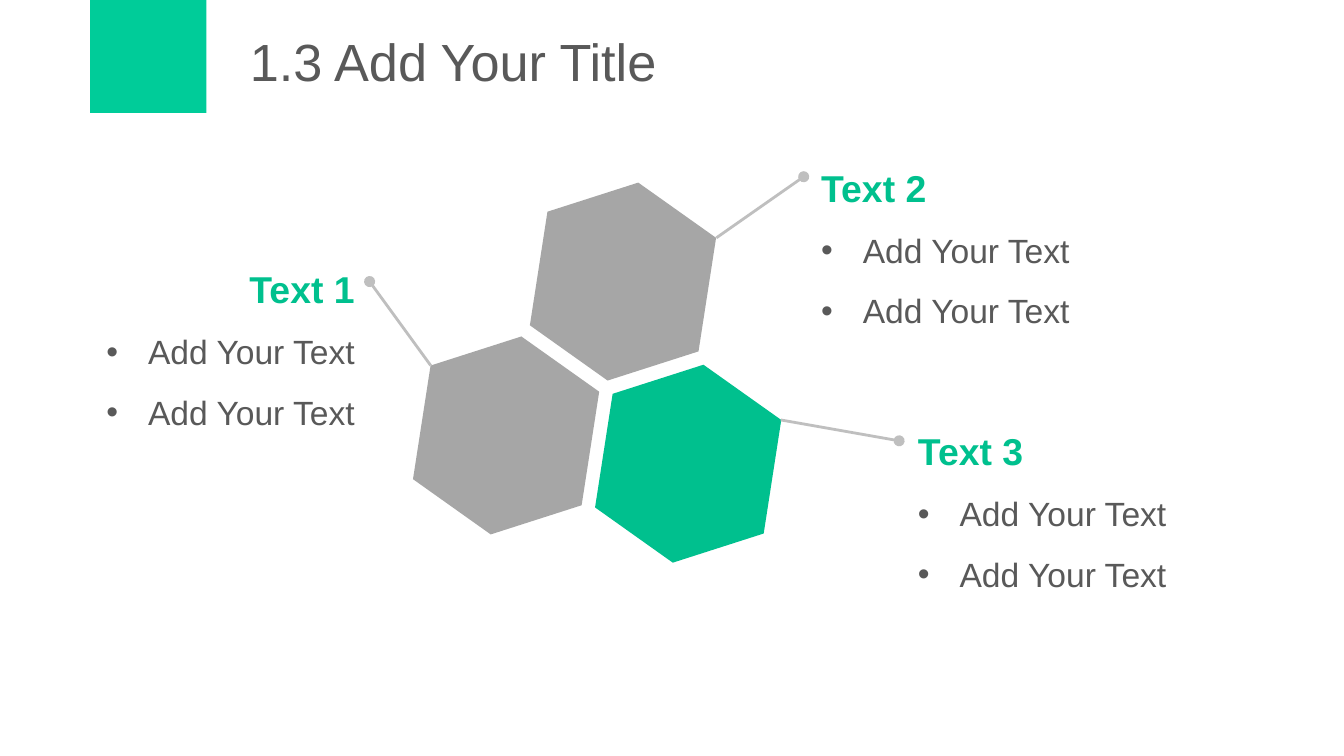
import pptx
import pptx.dml.color
import pptx.enum.shapes
import pptx.enum.text
import pptx.oxml
import pptx.oxml.ns
import pptx.util
from dataclasses import dataclass

TITLE = "1.3 Add Your Title"
TITLE_BOX = (352, 27, 1578, 126)
CORNER_BLOCK = (134, 0, 173, 168)
ITEMS = ["Add Your Text", "Add Your Text"]

# Each topic: heading, text box, alignment, hexagon corner, hexagon colour, leader line
TOPICS = [
    {"heading": "Text 1", "box": (102, 353, 446, 302), "align": "RIGHT",
     "hexagon": (604, 521), "fill": "grey", "leader": (641, 544, 550, 419)},
    {"heading": "Text 2", "box": (1202, 202, 536, 302), "align": "LEFT",
     "hexagon": (778, 292), "fill": "grey", "leader": (1066, 354, 1196, 263)},
    {"heading": "Text 3", "box": (1346, 594, 536, 302), "align": "LEFT",
     "hexagon": (875, 563), "fill": "green", "leader": (1162, 625, 1338, 656)},
]

SLIDE_SIZE = (2000, 1125)
HEXAGON_SIZE = (298, 254)
HEXAGON_ROTATION = 98.8
BULLET_INDENT = 62
EMU_PER_PX = 4572  # 200 px to the inch


@dataclass(frozen=True)
class Theme:
    font: str = "Arial"
    block: str = "00CC99"
    green: str = "00C08E"
    grey: str = "A6A6A6"
    leader: str = "BFBFBF"
    text: str = "595959"
    title_size: int = 28
    heading_size: int = 20
    item_size: int = 18
    leader_width: float = 1.5


THEME = Theme()


def px(*lengths):
    return [pptx.util.Emu(length * EMU_PER_PX) for length in lengths]


def rgb(color):
    return pptx.dml.color.RGBColor.from_string(color)


def append_xml(parent, xml):
    """Append a DrawingML element, written without its namespace declaration."""
    tag, rest = xml.split(" ", 1)
    namespace = pptx.oxml.ns.nsdecls("a")
    element = pptx.oxml.parse_xml(f"{tag} {namespace} {rest}")
    parent.append(element)


def place(shape, box):
    shape.left, shape.top, shape.width, shape.height = px(*box)


def add_run(paragraph, text, size, color, bold=False):
    run = paragraph.add_run()
    run.text = text
    run.font.name = THEME.font
    run.font.size = pptx.util.Pt(size)
    run.font.bold = bold
    run.font.color.rgb = rgb(color)


def add_solid(slide, kind, box, color):
    shape = slide.shapes.add_shape(kind, *px(*box))
    shape.shadow.inherit = False
    shape.fill.solid()
    shape.fill.fore_color.rgb = rgb(color)
    shape.line.fill.background()
    return shape


def add_leader(slide, ends):
    """Draw a thin line that finishes in a dot."""
    connector = slide.shapes.add_connector(
        pptx.enum.shapes.MSO_CONNECTOR.STRAIGHT, *px(*ends))
    connector.line.color.rgb = rgb(THEME.leader)
    connector.line.width = pptx.util.Pt(THEME.leader_width)
    append_xml(connector.line._get_or_add_ln(), '<a:tailEnd type="oval"/>')
    append_xml(connector._element.spPr, "<a:effectLst />")


def fill_title(title):
    place(title, TITLE_BOX)
    frame = title.text_frame
    frame.vertical_anchor = pptx.enum.text.MSO_ANCHOR.MIDDLE
    frame.auto_size = pptx.enum.text.MSO_AUTO_SIZE.NONE
    paragraph = frame.paragraphs[0]
    paragraph.alignment = pptx.enum.text.PP_ALIGN.LEFT
    add_run(paragraph, TITLE, THEME.title_size, THEME.text)


def fill_topic(body, topic):
    place(body, topic["box"])
    frame = body.text_frame
    frame.word_wrap = True
    frame.vertical_anchor = pptx.enum.text.MSO_ANCHOR.TOP
    frame.auto_size = pptx.enum.text.MSO_AUTO_SIZE.SHAPE_TO_FIT_TEXT
    for index, text in enumerate([topic["heading"], *ITEMS]):
        is_heading = index == 0
        paragraph = frame.paragraphs[0] if is_heading else frame.add_paragraph()
        paragraph.alignment = pptx.enum.text.PP_ALIGN[topic["align"]]
        paragraph.line_spacing = 1.5
        paragraph.space_before = pptx.util.Pt(0)
        properties = paragraph._p.get_or_add_pPr()
        indent = 0 if is_heading else BULLET_INDENT * EMU_PER_PX
        properties.set("marL", str(indent))
        properties.set("indent", str(-indent))
        if is_heading:
            append_xml(properties, "<a:buNone />")
            add_run(paragraph, text, THEME.heading_size, THEME.green, bold=True)
        else:
            append_xml(properties, f'<a:buFont typeface="{THEME.font}"/>')
            append_xml(properties, '<a:buChar char="•"/>')
            add_run(paragraph, text, THEME.item_size, THEME.text)


def main():
    presentation = pptx.Presentation()
    presentation.slide_width, presentation.slide_height = px(*SLIDE_SIZE)
    comparison_layout = presentation.slide_layouts[4]
    slide = presentation.slides.add_slide(comparison_layout)

    shapes = pptx.enum.shapes.MSO_SHAPE
    add_solid(slide, shapes.RECTANGLE, CORNER_BLOCK, THEME.block)
    title, *bodies = list(slide.placeholders)
    fill_title(title)
    for body, topic in zip(bodies, TOPICS):
        fill_topic(body, topic)
        hexagon = add_solid(slide, shapes.HEXAGON, topic["hexagon"] + HEXAGON_SIZE,
                            getattr(THEME, topic["fill"]))
        hexagon.adjustments[0] = 0.25
        hexagon.rotation = HEXAGON_ROTATION
        add_leader(slide, topic["leader"])
    for spare in bodies[len(TOPICS):]:
        spare._element.getparent().remove(spare._element)

    presentation.save("out.pptx")


if __name__ == "__main__":
    main()
